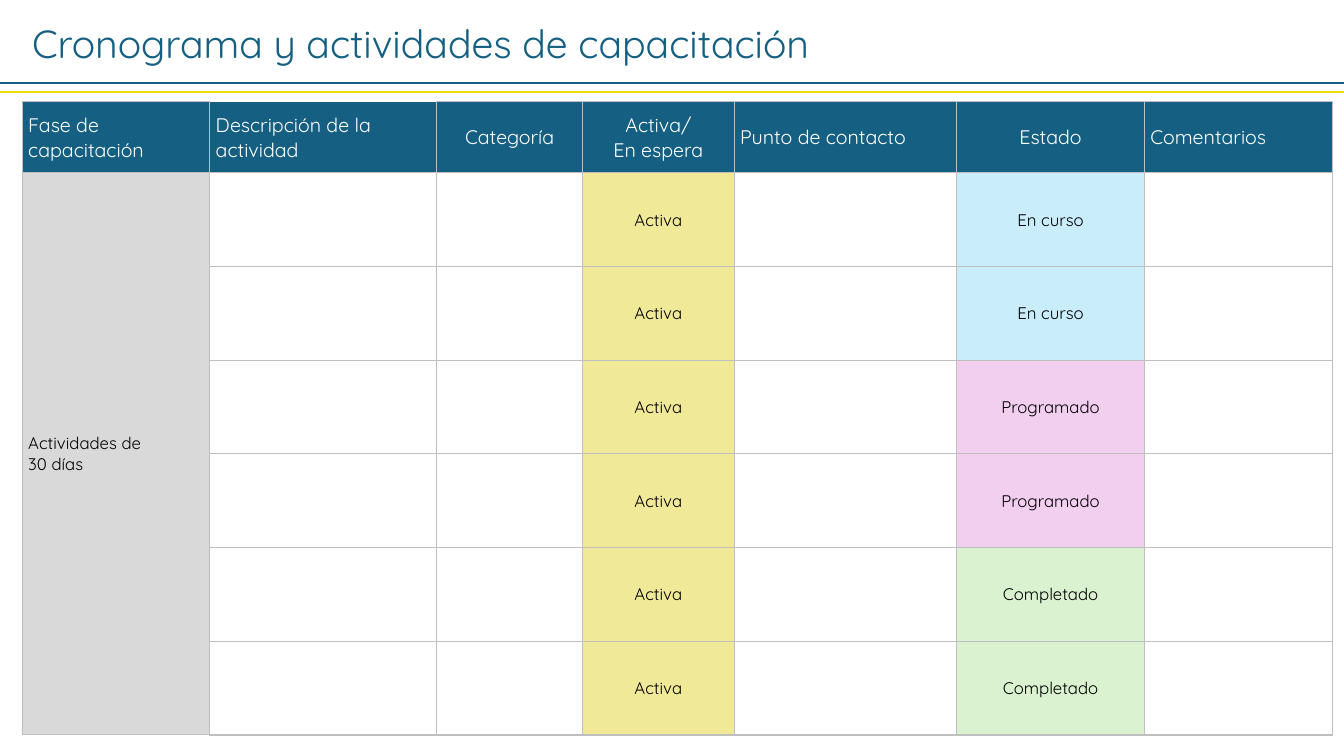
from pptx import Presentation
from pptx.dml.color import RGBColor
from pptx.enum.shapes import MSO_CONNECTOR
from pptx.enum.text import MSO_ANCHOR, MSO_AUTO_SIZE, PP_ALIGN
from pptx.oxml.ns import qn
from pptx.util import Inches, Pt
from lxml import etree

LEFT, CENTER = PP_ALIGN.LEFT, PP_ALIGN.CENTER
MIDDLE = MSO_ANCHOR.MIDDLE
STRAIGHT = MSO_CONNECTOR.STRAIGHT

FONT = "Quicksand"
COLORS = {
    "blue": "156082", "yellow": "E8DD06", "white": "FFFFFF", "black": "000000",
    "border": "BFBFBF", "phase": "D9D9D9", "Activa": "F0EA98",
    "En curso": "CAEDFB", "Programado": "F2CEEF", "Completado": "DAF2D0",
}

TITLE = "Cronograma y actividades de capacitación"
RULES = [(0.82, "blue"), (0.91, "yellow")]
COLUMNS = [  # heading, width, alignment
    ("Fase de capacitación", 1.86, LEFT),
    ("Descripción de la actividad", 2.25, LEFT),
    ("Categoría", 1.45, CENTER),
    ("Activa/\nEn espera", 1.5, CENTER),
    ("Punto de contacto", 2.21, LEFT),
    ("Estado", 1.86, CENTER),
    ("Comentarios", 1.86, LEFT),
]
PHASE = "Actividades de \n30 días"
ACTIVITIES = [
    ("Activa", "En curso"),
    ("Activa", "En curso"),
    ("Activa", "Programado"),
    ("Activa", "Programado"),
    ("Activa", "Completado"),
    ("Activa", "Completado"),
]
ACTIVE_COL, STATUS_COL, DESCRIPTION_COL = 3, 5, 1
HEADER_H, ROW_H = 0.7, 0.93


def rgb(name):
    return RGBColor.from_string(COLORS[name])


def write(p, text, size, color, align=LEFT):
    p.text = text
    p.alignment = align
    for r in p.runs:
        r.font.name, r.font.size = FONT, Pt(size)
        r.font.color.rgb = rgb(color)


def add_borders(cell, widths):
    """Draw cell borders; widths maps a side (L, R, T, B) to points."""
    tc_pr = cell._tc.get_or_add_tcPr()
    for side, width in widths.items():
        ln = etree.SubElement(tc_pr, qn(f"a:ln{side}"), w=str(Pt(width)))
        fill = etree.SubElement(ln, qn("a:solidFill"))
        etree.SubElement(fill, qn("a:srgbClr"), val=COLORS["border"])


def format_cell(cell, fill, borders, align):
    add_borders(cell, borders)
    cell.fill.solid()
    cell.fill.fore_color.rgb = rgb(fill)
    cell.vertical_anchor = MIDDLE
    margins = {"margin_left": 0.06 if align == LEFT else 0.01,
               "margin_right": 0.01, "margin_top": 0.01, "margin_bottom": 0}
    for name, value in margins.items():
        setattr(cell, name, Inches(value))


def add_schedule(s):
    rows, cols = len(ACTIVITIES) + 1, len(COLUMNS)
    width = sum(w for _, w, _ in COLUMNS)
    height = HEADER_H + ROW_H * len(ACTIVITIES)
    table = s.shapes.add_table(rows, cols, Inches(0.22), Inches(1.01),
                               Inches(width), Inches(height)).table
    table.first_row = table.horz_banding = False
    for i, row in enumerate(table.rows):
        row.height = Inches(ROW_H if i else HEADER_H)

    for j, (heading, col_w, align) in enumerate(COLUMNS):
        table.columns[j].width = Inches(col_w)
        for i in range(rows):
            text, fill = "", "white"
            if i == 0:
                text, fill = heading, "blue"
            elif j == 0:
                text, fill = PHASE if i == 1 else "", "phase"
            elif j in (ACTIVE_COL, STATUS_COL):
                text = fill = ACTIVITIES[i - 1][j == STATUS_COL]
            borders = dict.fromkeys("LRTB", 0.5)
            if i == rows - 1:
                borders["B"] = 1.5
            if i == 0 and j == DESCRIPTION_COL:
                del borders["T"]
            cell = table.cell(i, j)
            format_cell(cell, fill, borders, align)
            if text:
                write(cell.text_frame.paragraphs[0], text, 12 if i else 14,
                      "black" if i else "white", align)
    table.cell(1, 0).merge(table.cell(rows - 1, 0))


def add_title(s):
    tf = s.shapes.add_textbox(Inches(0.22), Inches(0.14),
                              Inches(11.18), Inches(0.57)).text_frame
    tf.word_wrap = True
    tf.auto_size = MSO_AUTO_SIZE.SHAPE_TO_FIT_TEXT
    write(tf.paragraphs[0], TITLE, 28, "blue")


def add_rule(s, y, color, width):
    line = s.shapes.add_connector(STRAIGHT, 0, Inches(y), width, Inches(y))
    line.line.color.rgb = rgb(color)
    line.line.width = Pt(1.5)
    etree.SubElement(line._element.spPr, qn("a:effectLst"))


def main():
    prs = Presentation()
    prs.slide_width, prs.slide_height = Inches(13.33), Inches(7.5)
    s = prs.slides.add_slide(prs.slide_layouts[6])
    add_schedule(s)
    add_title(s)
    for y, color in RULES:
        add_rule(s, y, color, prs.slide_width)
    prs.save("out.pptx")


if __name__ == "__main__":
    main()
